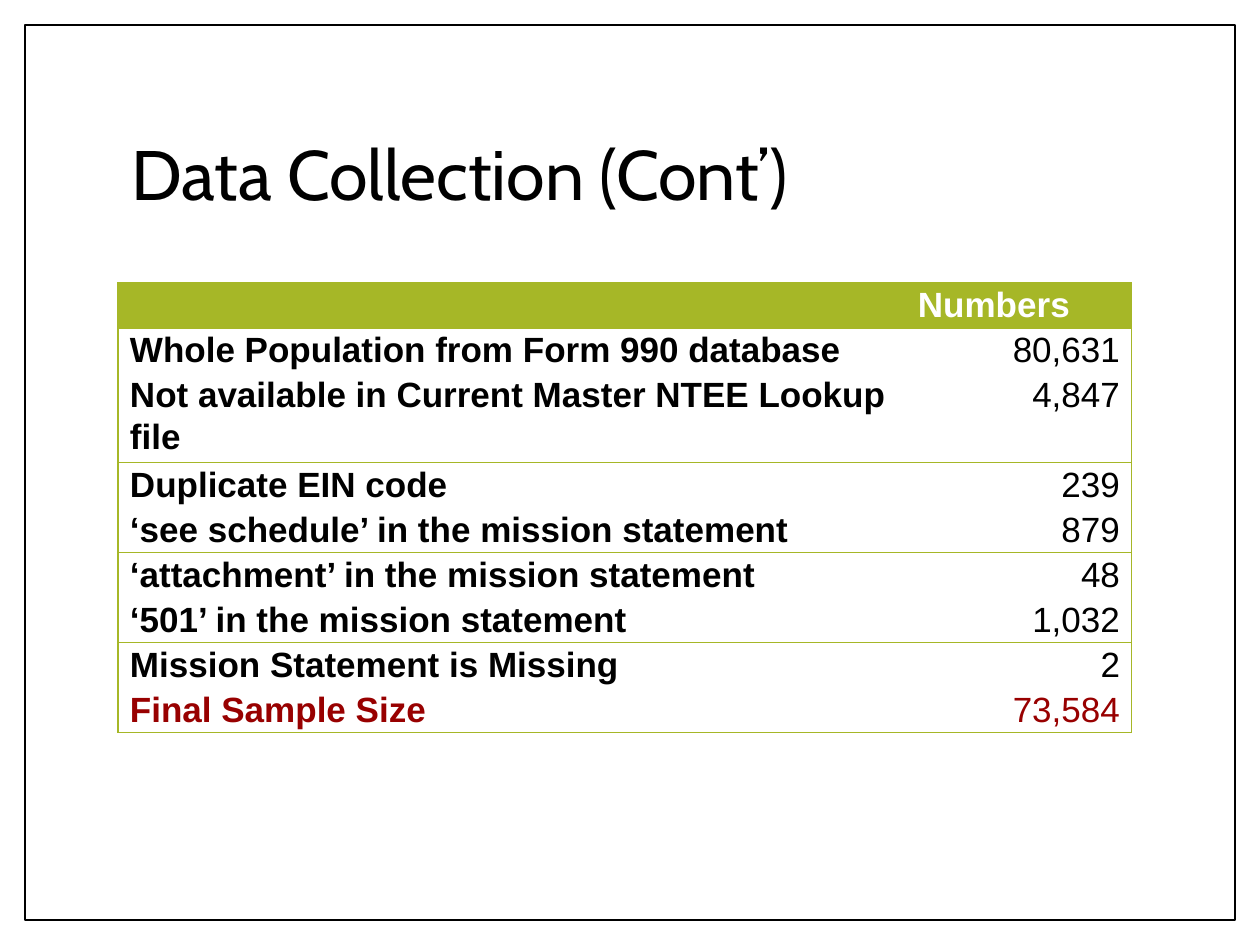
from pptx import Presentation
from pptx.dml.color import RGBColor
from pptx.enum.shapes import MSO_SHAPE
from pptx.enum.text import MSO_ANCHOR, PP_ALIGN
from pptx.oxml.ns import qn
from pptx.util import Emu, Pt
from lxml.etree import SubElement

PX = 914400 // 126
COLORS = {"paper": "FFFFFF", "ink": "000000", "green": "A6B727", "red": "980000"}


def px(n):
    return Emu(n * PX)


def write(frame, text, *, size=20, font="Arial", color="ink", bold=False,
          align=PP_ALIGN.LEFT, spacing=1.07):
    paragraph = frame.paragraphs[0]
    paragraph.alignment = align
    paragraph.line_spacing = spacing
    paragraph.font.size = Pt(size)
    if text:
        run = paragraph.add_run()
        run.text = text
        run.font.name = font
        run.font.size = Pt(size)
        run.font.bold = bold
        run.font.color.rgb = RGBColor.from_string(COLORS[color])


prs = Presentation()
prs.slide_width, prs.slide_height = px(1260), px(945)
slide = prs.slides.add_slide(prs.slide_layouts[6])

# Page border
border = slide.shapes.add_shape(MSO_SHAPE.RECTANGLE, px(25), px(25), px(1210), px(895))
border.shadow.inherit = False
border.fill.solid()
border.fill.fore_color.rgb = RGBColor.from_string(COLORS["paper"])
border.line.color.rgb = RGBColor.from_string(COLORS["ink"])
border.line.width = Pt(1)

# Title
title = slide.shapes.add_textbox(px(119), px(84), px(1021), px(187)).text_frame
title.word_wrap = True
title.vertical_anchor = MSO_ANCHOR.MIDDLE
write(title, "Data Collection (Cont’)", size=40, font="Cabin", spacing=0.9)

# Sample table
counts = [
    ("", "Numbers"),
    ("Whole Population from Form 990 database", "80,631"),
    ("Not available in Current Master NTEE Lookup file", "4,847"),
    ("Duplicate EIN code", "239"),
    ("‘see schedule’ in the mission statement", "879"),
    ("‘attachment’ in the mission statement", "48"),
    ("‘501’ in the mission statement", "1,032"),
    ("Mission Statement is Missing", "2"),
    ("Final Sample Size", "73,584"),
]
last = len(counts) - 1
table = slide.shapes.add_table(len(counts), 2, px(118), px(283), px(1014), px(297)).table
table.horz_banding = False
for column, width in zip(table.columns, (788, 226)):
    column.width = px(width)

for r, record in enumerate(counts):
    table.rows[r].height = px(33)
    for c, text in enumerate(record):
        cell = table.cell(r, c)
        cell.margin_left = cell.margin_right = px(12)
        cell.margin_top = cell.margin_bottom = 0

        # Rules frame the table and close each pair of rows
        ruled = {"a:lnL": c == 0, "a:lnR": c == 1,
                 "a:lnT": r == 0 or r % 2 == 1, "a:lnB": r % 2 == 0}
        properties = cell._tc.get_or_add_tcPr()
        for side, visible in ruled.items():
            rule = SubElement(properties, qn(side), w=str(Pt(0.75)))
            if visible:
                paint = SubElement(rule, qn("a:solidFill"))
                SubElement(paint, qn("a:srgbClr"), val=COLORS["green"])
            else:
                SubElement(rule, qn("a:noFill"))

        if r == 0:
            cell.fill.solid()
            cell.fill.fore_color.rgb = RGBColor.from_string(COLORS["green"])
        else:
            cell.fill.background()
        color = "paper" if r == 0 else "red" if r == last else "ink"
        write(cell.text_frame, text, color=color, bold=r == 0 or c == 0,
              align=PP_ALIGN.RIGHT if r and c else PP_ALIGN.LEFT)

prs.save("out.pptx")
